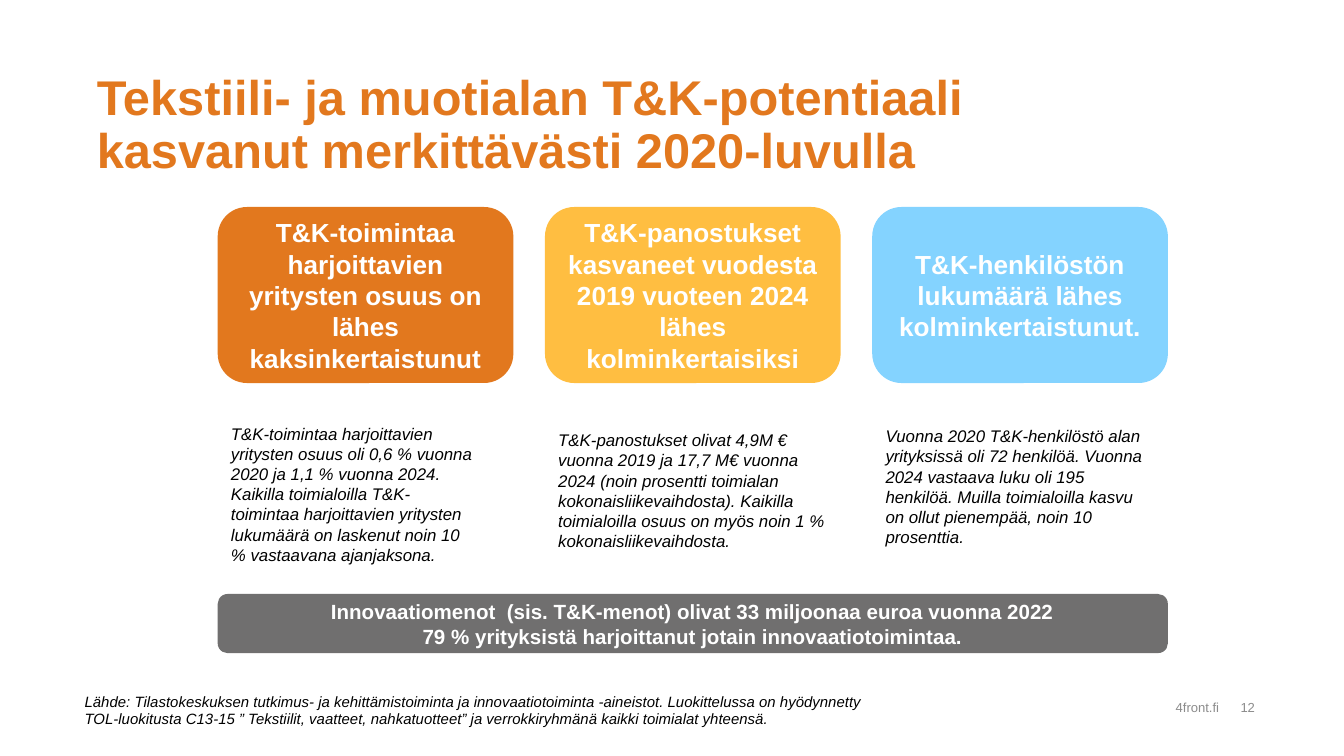
from pptx import Presentation
from pptx.dml.color import RGBColor
from pptx.enum.shapes import MSO_SHAPE
from pptx.enum.text import MSO_ANCHOR, PP_ALIGN
from pptx.util import Inches, Pt

HUES = {"orange": "E2781E", "amber": "FFBE41", "sky": "84D3FF", "slate": "706F6F",
        "white": "FFFFFF", "black": "000000", "gray": "8C8C8C"}

# Text formats: font values, then paragraph values
FONTS = {
    "title": {"size": Pt(26.1), "bold": True},
    "card": {"size": Pt(14), "bold": True},
    "band": {"size": Pt(11), "bold": True},
    "note": {"size": Pt(9), "italic": True},
    "source": {"size": Pt(8), "italic": True},
    "foot": {"size": Pt(7)},
}
PARAS = {
    "title": {"line_spacing": 0.9},
    "card": {"alignment": PP_ALIGN.CENTER},
    "band": {"alignment": PP_ALIGN.CENTER},
    "foot": {"space_after": Pt(6)},
}

# Card colour, heading, note, note offset from card top, note width and height
CARDS = [
    ("orange", "T&K-toimintaa harjoittavien yritysten osuus on lähes kaksinkertaistunut",
     "T&K-toimintaa harjoittavien yritysten osuus oli 0,6 % vuonna 2020 ja 1,1 % vuonna 2024. "
     "Kaikilla toimialoilla T&K-toimintaa harjoittavien yritysten lukumäärä on laskenut "
     "noin 10 % vastaavana ajanjaksona.", 1.56, 2.01, 1.16),
    ("amber", "T&K-panostukset kasvaneet vuodesta 2019 vuoteen 2024 lähes kolminkertaisiksi",
     "T&K-panostukset olivat 4,9M € vuonna 2019 ja 17,7 M€ vuonna 2024 (noin prosentti "
     "toimialan kokonaisliikevaihdosta). Kaikilla toimialoilla osuus on myös noin 1 % "
     "kokonaisliikevaihdosta.", 1.61, 2.25, 1.01),
    ("sky", "T&K-henkilöstön lukumäärä lähes kolminkertaistunut.",
     "Vuonna 2020 T&K-henkilöstö alan yrityksissä oli 72 henkilöä. Vuonna 2024 vastaava luku "
     "oli 195 henkilöä. Muilla toimialoilla kasvu on ollut pienempää, noin 10 prosenttia.",
     1.58, 2.12, 1.01),
]


def write(frame, lines, kind, hue, **extra):
    """Fill a text frame with one paragraph per line."""
    frame.word_wrap = True
    for i, line in enumerate(lines):
        para = frame.paragraphs[0] if i == 0 else frame.add_paragraph()
        para.text = line
        for key, val in {**PARAS.get(kind, {}), **extra}.items():
            setattr(para, key, val)
        for key, val in {"name": "Arial", **FONTS[kind]}.items():
            setattr(para.font, key, val)
        para.font.color.rgb = RGBColor.from_string(HUES[hue])


def label(slide, box, text, kind, hue="black", inset=True, anchor=MSO_ANCHOR.TOP, **extra):
    """Place a plain text box."""
    frame = slide.shapes.add_textbox(*map(Inches, box)).text_frame
    frame.vertical_anchor = anchor
    if not inset:
        for side in ("left", "top", "right", "bottom"):
            setattr(frame, f"margin_{side}", 0)
    write(frame, [text], kind, hue, **extra)


def panel(slide, box, fill, lines, kind):
    """Place a rounded panel with centred white text."""
    shape = slide.shapes.add_shape(MSO_SHAPE.FLOWCHART_ALTERNATE_PROCESS, *map(Inches, box))
    shape.shadow.inherit = False
    shape.fill.solid()
    shape.fill.fore_color.rgb = RGBColor.from_string(HUES[fill])
    shape.line.fill.background()
    shape.text_frame.vertical_anchor = MSO_ANCHOR.MIDDLE
    write(shape.text_frame, lines, kind, "white")


def cards(slide, box):
    """Spread the cards evenly across the box, each with its note below."""
    left, top, width, height = box
    wide = 2.2
    step = (width - wide) / (len(CARDS) - 1)
    for i, (fill, head, note, drop, span, tall) in enumerate(CARDS):
        x = left + i * step
        panel(slide, (x, top, wide, height), fill, [head], "card")
        label(slide, (x, top + drop, span, tall), note, "note")


def footer(slide, box):
    """Place the source line, site and page number."""
    left, top, width, height = box
    label(slide, (left, top, 5.86, height), "Lähde: Tilastokeskuksen tutkimus- ja "
          "kehittämistoiminta ja innovaatiotoiminta -aineistot. Luokittelussa on hyödynnetty "
          "TOL-luokitusta C13-15 ” Tekstiilit, vaatteet, nahkatuotteet” ja verrokkiryhmänä "
          "kaikki toimialat yhteensä.", "source", inset=False)
    edge = left + width
    for text, back, span, align in (("4front.fi", 4.09, 3.38, PP_ALIGN.RIGHT),
                                    ("12", 0.55, 0.55, PP_ALIGN.LEFT)):
        label(slide, (edge - back, top + 0.03, span, 0.17), text, "foot", "gray",
              inset=False, anchor=MSO_ANCHOR.MIDDLE, alignment=align)


def main():
    deck = Presentation()
    # Widescreen, 16:9
    deck.slide_width, deck.slide_height = Inches(10), Inches(10 * 9 / 16)
    slide = deck.slides.add_slide(deck.slide_layouts[6])

    # Title
    label(slide, (0.72, 0.55, 8.59, 0.83), "Tekstiili- ja muotialan T&K-potentiaali \v"
          "kasvanut merkittävästi 2020-luvulla", "title", "orange", inset=False)
    # Cards and summary band share the same left edge and width
    left, width = 1.62, 7.07
    cards(slide, (left, 1.54, width, 1.31))
    panel(slide, (left, 4.42, width, 0.44), "slate",
          ["Innovaatiomenot  (sis. T&K-menot) olivat 33 miljoonaa euroa vuonna 2022",
           "79 % yrityksistä harjoittanut jotain innovaatiotoimintaa."], "band")
    footer(slide, (0.63, 5.15, 9.15, 0.27))
    deck.save("out.pptx")


if __name__ == "__main__":
    main()
